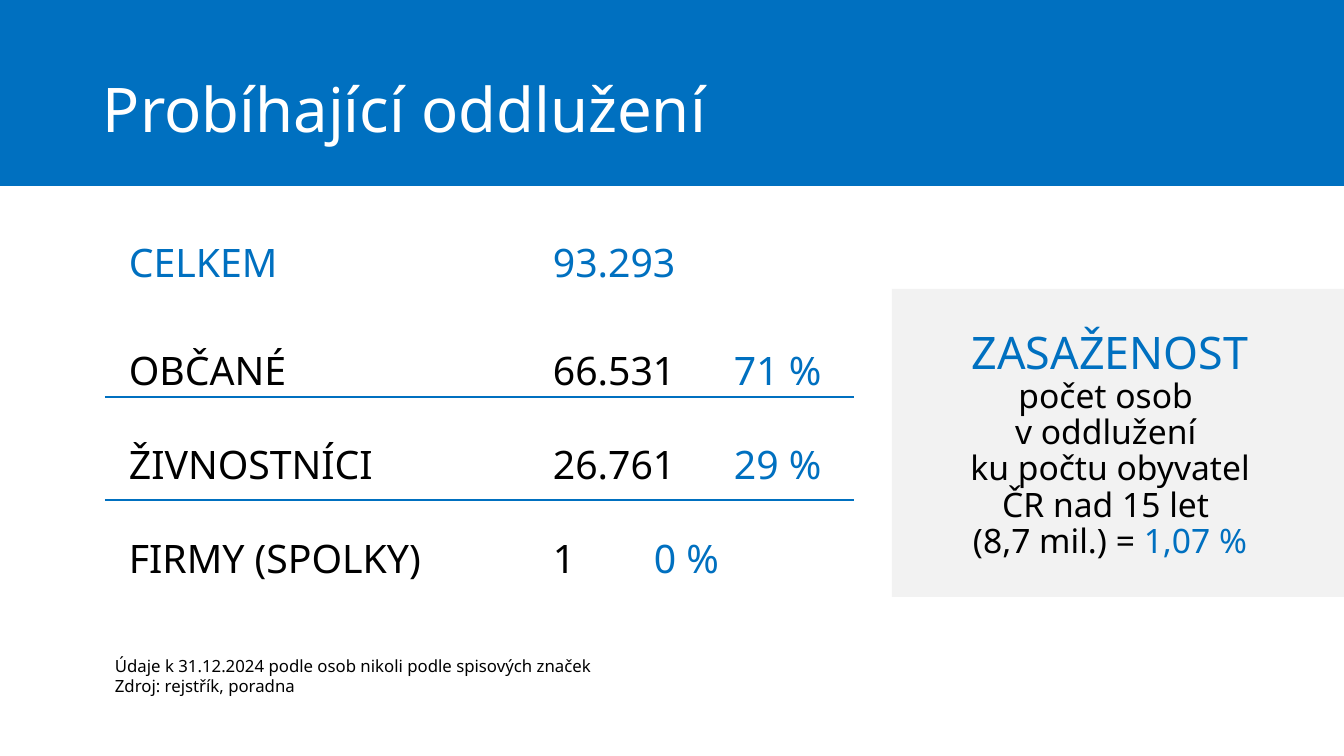
"""Builds the slide on debt relief proceedings in progress."""
import pptx
import pptx.dml.color
import pptx.enum.shapes
import pptx.enum.text
import pptx.oxml
import pptx.oxml.ns
import pptx.util

COLORS = {"blue": "0070C0", "white": "FFFFFF", "black": "000000", "grey": "F2F2F2"}
FONT = "Noto Sans"
PAGE_SIZE = (1344, 756)
PX = 914400 / 100.8

TITLE = [[("Probíhající oddlužení", "white", 44)]]
TOTAL = ("CELKEM", "93.293")
GROUPS = [
    ("OBČANÉ", "66.531", "71 %"),
    ("ŽIVNOSTNÍCI", "26.761", "29 %"),
    ("FIRMY (SPOLKY)", "1", "0 %"),
]
IMPACT = [
    [("ZASAŽENOST", "blue", 32)],
    [("počet osob ", "black", 24)],
    [("v oddlužení ", "black", 24)],
    [("ku počtu obyvatel ČR nad 15 let ", "black", 24)],
    [("(8,7 mil.) = ", "black", 24), ("1,07 %", "blue", 24)],
]
SOURCE = [
    [("Údaje k 31.12.2024 podle osob nikoli podle spisových značek", "black", 12)],
    [("Zdroj: rejstřík, poradna", "black", 12)],
]
BANNER = (0, 0, 1344, 186)
PANEL = (892, 289, 452, 308)
RULE_LEFT, RULE_RIGHT = 105, 854
RULE_TOPS = (397, 500)
TAB_STOPS = (424, 525, 605)


def px(length):
    return pptx.util.Emu(round(length * PX))


def rgb(name):
    return pptx.dml.color.RGBColor.from_string(COLORS[name])


def add_block(page, box, color):
    block = page.shapes.add_shape(
        pptx.enum.shapes.MSO_SHAPE.RECTANGLE, *map(px, box))
    block.shadow.inherit = False
    block.fill.solid()
    block.fill.fore_color.rgb = rgb(color)
    block.line.fill.background()


def add_rule(page, top):
    rule = page.shapes.add_connector(
        pptx.enum.shapes.MSO_CONNECTOR.STRAIGHT,
        px(RULE_LEFT), px(top), px(RULE_RIGHT), px(top))
    rule.line.color.rgb = rgb("blue")
    rule.line.width = pptx.util.Pt(1.5)
    properties = rule._element.spPr
    properties.append(pptx.oxml.parse_xml(
        f"<a:effectLst {pptx.oxml.ns.nsdecls('a')}/>"))


def add_tabs(para):
    stops = "".join(f'<a:tab pos="{px(stop)}" algn="l"/>' for stop in TAB_STOPS)
    para._p.get_or_add_pPr().append(pptx.oxml.parse_xml(
        f"<a:tabLst {pptx.oxml.ns.nsdecls('a')}>{stops}</a:tabLst>"))


def add_text(page, box, lines, spacing=1.0, before=(), align="LEFT",
             anchor="TOP", tabs=False):
    frame = page.shapes.add_textbox(*map(px, box)).text_frame
    frame.word_wrap = True
    frame.vertical_anchor = getattr(pptx.enum.text.MSO_ANCHOR, anchor)
    for index, line in enumerate(lines):
        para = frame.add_paragraph() if index else frame.paragraphs[0]
        para.alignment = getattr(pptx.enum.text.PP_ALIGN, align)
        para.line_spacing = spacing
        para.space_before = pptx.util.Pt(before[index] if index < len(before) else 0)
        if tabs:
            add_tabs(para)
        for text, color, size in line:
            span = para.add_run()
            span.text = text
            span.font.name = FONT
            span.font.size = pptx.util.Pt(size)
            span.font.color.rgb = rgb(color)


def main():
    deck = pptx.Presentation()
    deck.slide_width, deck.slide_height = map(px, PAGE_SIZE)
    page = deck.slides.add_slide(deck.slide_layouts[6])

    add_block(page, BANNER, "blue")
    add_text(page, (93, 40, 1159, 146), TITLE, spacing=0.9, anchor="MIDDLE")
    for top in RULE_TOPS:
        add_rule(page, top)
    add_text(page, (105, 651, 933, 50), SOURCE)

    rows = [[("\t".join(TOTAL), "blue", 28)]]
    for label, count, share in GROUPS:
        rows.append([(f"{label}\t{count}\t", "black", 28), (share, "blue", 28)])
    add_text(page, (119, 186, 734, 420), rows, spacing=2.0, before=(10, 10), tabs=True)

    add_block(page, PANEL, "grey")
    add_text(page, (945, 326, 330, 251), IMPACT, spacing=0.9, before=(10,),
             align="CENTER")
    deck.save("out.pptx")


if __name__ == "__main__":
    main()
